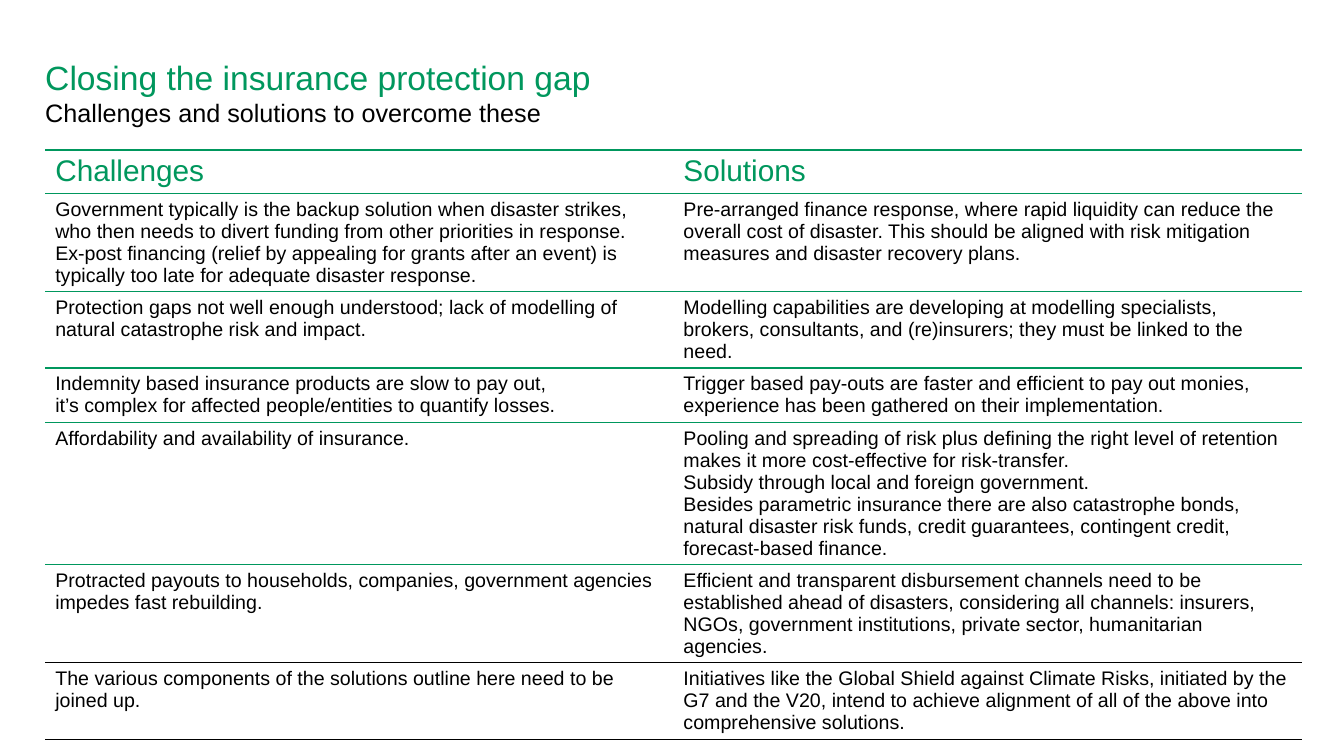
import pptx
import pptx.dml.color
import pptx.enum.text
import pptx.oxml
import pptx.oxml.ns
import pptx.util
from pptx.util import Cm

GREEN, BLACK = "00975D", "000000"
TITLE = "Closing the insurance protection gap"
SUBTITLE = "Challenges and solutions to overcome these"
HEADER = ("Challenges", "Solutions")

# Each row: height in cm, challenge paragraphs, solution paragraphs
ROWS = [
    (2.46,
     ["Government typically is the backup solution when disaster strikes, who then needs to "
      "divert funding from other priorities in response.",
      "Ex-post financing (relief by appealing for grants after an event) is typically too late "
      "for adequate disaster response."],
     ["Pre-arranged finance response, where rapid liquidity can reduce the overall cost of "
      "disaster. This should be aligned with risk mitigation measures and disaster recovery plans."]),
    (1.91,
     ["Protection gaps not well enough understood; lack of modelling of natural catastrophe "
      "risk and impact."],
     ["Modelling capabilities are developing at modelling specialists, brokers, consultants, "
      "and (re)insurers; they must be linked to the need."]),
    (1.36,
     ["Indemnity based insurance products are slow to pay out,",
      "it’s complex for affected people/entities to quantify losses."],
     ["Trigger based pay-outs are faster and efficient to pay out monies, experience has been "
      "gathered on their implementation."]),
    (3.58,
     ["Affordability and availability of insurance."],
     ["Pooling and spreading of risk plus defining the right level of retention makes it more "
      "cost-effective for risk-transfer.",
      "Subsidy through local and foreign government.",
      "Besides parametric insurance there are also catastrophe bonds, natural disaster risk "
      "funds, credit guarantees, contingent credit, forecast-based finance."]),
    (2.46,
     ["Protracted payouts to households, companies, government agencies impedes fast rebuilding."],
     ["Efficient and transparent disbursement channels need to be established ahead of "
      "disasters, considering all channels: insurers, NGOs, government institutions, private "
      "sector, humanitarian agencies."]),
    (1.91,
     ["The various components of the solutions outline here need to be joined up."],
     ["Initiatives like the Global Shield against Climate Risks, initiated by the G7 and the "
      "V20, intend to achieve alignment of all of the above into comprehensive solutions."]),
]
HEADER_HEIGHT = 1.1
LEFT, TABLE_TOP, COL_WIDTH = 1.14, 3.78, 15.83


def rgb(value):
    return pptx.dml.color.RGBColor.from_string(value)


def add_text(p, text, size=14, color=BLACK):
    r = p.add_run()
    r.text = text
    r.font.name = "Arial"
    r.font.size = pptx.util.Pt(size)
    r.font.bold = False
    r.font.color.rgb = rgb(color)


def set_borders(cell, top, bottom):
    """Draw the top and bottom rules, each a (colour, points) pair, and no side rules."""
    tcPr = cell._tc.get_or_add_tcPr()
    ns = pptx.oxml.ns.nsdecls("a")
    for tag, rule in (("lnL", None), ("lnR", None), ("lnT", top), ("lnB", bottom)):
        if rule:
            color, points = rule
            width = pptx.util.Pt(points)
            fill = f'<a:solidFill><a:srgbClr val="{color}"/></a:solidFill>'
        else:
            width, fill = 0, "<a:noFill/>"
        tcPr.append(pptx.oxml.parse_xml(f'<a:{tag} {ns} w="{width}">{fill}</a:{tag}>'))


def fill_cell(cell, paragraphs, **fmt):
    tf = cell.text_frame
    for i, text in enumerate(paragraphs):
        p = tf.paragraphs[0] if i == 0 else tf.add_paragraph()
        add_text(p, text, **fmt)


prs = pptx.Presentation()
prs.slide_width, prs.slide_height = Cm(33.87), Cm(19.05)
s = prs.slides.add_slide(prs.slide_layouts[5])

title = s.shapes.title
title.left, title.top, title.width, title.height = Cm(LEFT), Cm(1.32), Cm(25.07), Cm(2.26)
tf = title.text_frame
tf.word_wrap = True
tf.auto_size = pptx.enum.text.MSO_AUTO_SIZE.NONE
tf.vertical_anchor = pptx.enum.text.MSO_ANCHOR.TOP
tf.margin_left = tf.margin_right = tf.margin_bottom = 0
tf.margin_top = Cm(0.12)
p = tf.paragraphs[0]
p.alignment = pptx.enum.text.PP_ALIGN.LEFT
add_text(p, TITLE, size=24, color=GREEN)
p.add_line_break()
add_text(p, SUBTITLE, size=18)

heights = [HEADER_HEIGHT] + [row[0] for row in ROWS]
table = s.shapes.add_table(len(heights), 2, Cm(LEFT), Cm(TABLE_TOP),
                           Cm(2 * COL_WIDTH), Cm(sum(heights))).table
table.first_row = table.horz_banding = False
for column in table.columns:
    column.width = Cm(COL_WIDTH)

# One rule above each row and one below the last; the last row has thin dark rules
rules = [(GREEN, 1)] * len(ROWS) + [(BLACK, 0.5)] * 2
for i, height in enumerate(heights):
    table.rows[i].height = Cm(height)
    for j in range(2):
        cell = table.cell(i, j)
        if i == 0:
            fill_cell(cell, [HEADER[j]], size=21.3, color=GREEN)
        else:
            fill_cell(cell, ROWS[i - 1][j + 1])
        set_borders(cell, rules[i], rules[i + 1])
        cell.fill.background()

prs.save("out.pptx")
